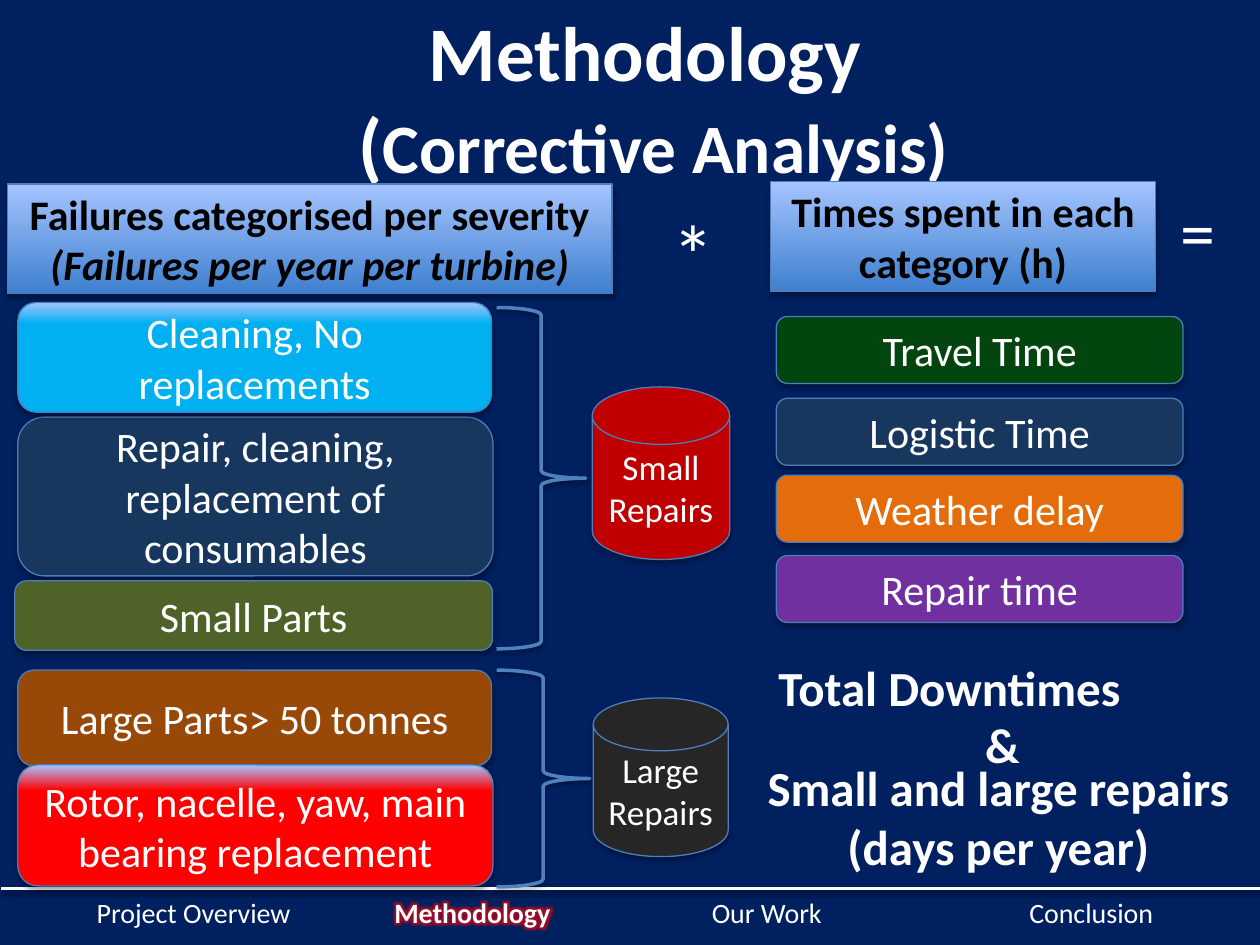
from dataclasses import dataclass

from lxml.etree import SubElement
from pptx import Presentation
from pptx.dml.color import RGBColor
from pptx.enum.shapes import MSO_CONNECTOR, MSO_SHAPE
from pptx.enum.text import MSO_ANCHOR, PP_ALIGN
from pptx.oxml.ns import qn
from pptx.util import Cm, Pt


@dataclass(frozen=True)
class Theme:
    font: str = "Calibri"
    background: str = "002060"
    light: str = "FFFFFF"
    dark: str = "000000"
    outline: str = "4B7EBC"
    brace: str = "4F81BD"
    header: str = "3F80CE"
    highlight: str = "A4C4FF"
    glow: str = "FF0000"
    cleaning: str = "00B0F0"
    navy: str = "17375E"
    small_parts: str = "4F6228"
    large_parts: str = "984807"
    rotor: str = "FF0000"
    small_repairs: str = "C00000"
    large_repairs: str = "262626"
    travel: str = "03450E"
    weather: str = "E46C0A"
    repair: str = "7030A0"
    title_size: float = 44.1
    subtitle_size: float = 39.6
    times_size: float = 48
    equals_size: float = 40
    result_size: float = 28
    body_size: float = 24
    disk_size: float = 20
    footer_size: float = 16


THEME = Theme()


def rgb(color):
    return RGBColor.from_string(color)


def add_effect(parent, tag, color, opacity, **attributes):
    effect = SubElement(parent, qn(tag), {key: str(value) for key, value in attributes.items()})
    color_element = SubElement(effect, qn("a:srgbClr"), val=color)
    SubElement(color_element, qn("a:alpha"), val=str(opacity * 1000))


def add_shadow(shape, opacity, distance):
    effects = SubElement(shape.element.spPr, qn("a:effectLst"))
    add_effect(effects, "a:outerShdw", THEME.dark, opacity, blurRad=Pt(3.1),
               dist=Pt(distance), dir=5400000, rotWithShape=0)


def add_run(paragraph, text, size, color=THEME.light, bold=False, italic=False):
    run = paragraph.add_run()
    run.text = text
    font = run.font
    font.name, font.size, font.bold, font.italic = THEME.font, Pt(size), bold, italic
    font.color.rgb = rgb(color)
    return run


def add_glow(run):
    latin = run.font._element.find(qn("a:latin"))
    effects = SubElement(run.font._element, qn("a:effectLst"))
    latin.addprevious(effects)
    add_effect(effects, "a:glow", THEME.glow, 60, rad=Pt(8))


def add_text(slide, box, lines, size, bold=False, align=PP_ALIGN.LEFT, wrap=True):
    """Add a text box with one paragraph per line and return its last run."""
    frame = slide.shapes.add_textbox(*map(Cm, box)).text_frame
    frame.word_wrap = wrap
    for index, line in enumerate(lines):
        paragraph = frame.add_paragraph() if index else frame.paragraphs[0]
        paragraph.alignment = align
        run = add_run(paragraph, line, size, bold=bold)
    return run


def add_title(slide):
    frame = slide.shapes.add_textbox(Cm(5.08), Cm(0), Cm(16.2), Cm(3.9)).text_frame
    frame.word_wrap = True
    frame.vertical_anchor = MSO_ANCHOR.MIDDLE
    paragraph = frame.paragraphs[0]
    paragraph.alignment = PP_ALIGN.CENTER
    add_run(paragraph, "Methodology ", THEME.title_size, bold=True)
    paragraph.add_line_break()
    add_run(paragraph, "(", THEME.title_size, bold=True)
    add_run(paragraph, "Corrective Analysis)", THEME.subtitle_size, bold=True)


def add_block(slide, kind, box, color, gradient_start=None):
    """Add an outlined shape; a gradient start fades the colour to the highlight at the top."""
    shape = slide.shapes.add_shape(kind, *map(Cm, box))
    if gradient_start is None:
        shape.fill.solid()
        shape.fill.fore_color.rgb = rgb(color)
    else:
        shape.fill.gradient()
        shape.fill.gradient_angle = 90
        stops = zip(shape.fill.gradient_stops, (gradient_start, 1), (color, THEME.highlight))
        for stop, position, stop_color in stops:
            stop.position = position
            stop.color.rgb = rgb(stop_color)
    shape.line.color.rgb = rgb(THEME.outline)
    shape.line.width = Pt(0.75)
    add_shadow(shape, 35, 1.8)
    shape.text_frame.word_wrap = True
    shape.text_frame.vertical_anchor = MSO_ANCHOR.MIDDLE
    shape.text_frame.paragraphs[0].alignment = PP_ALIGN.CENTER
    return shape.text_frame


def add_label(slide, kind, box, color, text, size=THEME.body_size, gradient_start=None):
    frame = add_block(slide, kind, box, color, gradient_start)
    add_run(frame.paragraphs[0], text, size)


def add_header(slide, box, heading, unit=None):
    frame = add_block(slide, MSO_SHAPE.FLOWCHART_PROCESS, box, THEME.header, 0)
    add_run(frame.paragraphs[0], heading, THEME.body_size, THEME.dark, bold=True)
    if unit:
        paragraph = frame.add_paragraph()
        paragraph.alignment = PP_ALIGN.CENTER
        add_run(paragraph, unit, THEME.body_size, THEME.dark, bold=True, italic=True)


def add_brace(slide, box):
    brace = slide.shapes.add_shape(MSO_SHAPE.RIGHT_BRACE, *map(Cm, box))
    brace.fill.background()
    brace.line.color.rgb = rgb(THEME.brace)
    brace.line.width = Pt(2)
    add_shadow(brace, 38, 1.6)


def add_footer(slide):
    sections = (("Project Overview", 1.7), ("Methodology", 7.7), ("Our Work", 14.1), ("Conclusion", 20.5))
    for name, left in sections:
        current = name == "Methodology"
        run = add_text(slide, (left, 17.92, 5.59, 0.94), [name], THEME.footer_size, bold=current)
        if current:
            add_glow(run)
    rule = slide.shapes.add_connector(MSO_CONNECTOR.STRAIGHT, Cm(0.03), Cm(17.91), Cm(25.43), Cm(17.91))
    rule.line.color.rgb = rgb(THEME.light)
    rule.line.width = Pt(2)
    add_shadow(rule, 38, 1.6)


def add_failures(slide):
    add_header(slide, (0.15, 3.71, 12.19, 2.21), "Failures categorised per severity",
               "(Failures per year per turbine)")
    categories = (
        ("Repair, cleaning, replacement of consumables", (0.36, 8.41, 9.58, 3.2), THEME.navy, None),
        ("Small Parts", (0.3, 11.71, 9.63, 1.4), THEME.small_parts, None),
        ("Large Parts> 50 tonnes", (0.36, 13.51, 9.55, 1.93), THEME.large_parts, None),
        ("Rotor, nacelle, yaw, main bearing replacement", (0.36, 15.42, 9.58, 2.44), THEME.rotor, 0.79),
        ("Cleaning, No replacements", (0.36, 6.1, 9.55, 2.21), THEME.cleaning, 0.81),
    )
    for text, box, color, start in categories:
        add_label(slide, MSO_SHAPE.FLOWCHART_ALTERNATE_PROCESS, box, color, text, gradient_start=start)
    groups = (
        ("Small Repairs", (10.01, 6.2, 1.8, 6.88), (11.94, 7.8, 2.77, 3.48), THEME.small_repairs),
        ("Large Repairs", (10.01, 13.51, 1.88, 4.37), (11.96, 14.07, 2.72, 3.2), THEME.large_repairs),
    )
    for text, brace_box, disk_box, color in groups:
        add_brace(slide, brace_box)
        add_label(slide, MSO_SHAPE.FLOWCHART_MAGNETIC_DISK, disk_box, color, text, THEME.disk_size)


def add_times(slide):
    add_header(slide, (15.54, 3.66, 7.75, 2.21), "Times spent in each category (h)")
    times = (("Travel Time", 6.38, THEME.travel), ("Logistic Time", 8.03, THEME.navy),
             ("Weather delay", 9.58, THEME.weather), ("Repair time", 11.2, THEME.repair))
    for text, top, color in times:
        add_label(slide, MSO_SHAPE.FLOWCHART_ALTERNATE_PROCESS, (15.65, top, 8.2, 1.35), color, text)


def add_result(slide):
    add_text(slide, (13.31, 3.94, 1.37, 2.31), ["*"], THEME.times_size, wrap=False)
    add_text(slide, (23.55, 3.68, 1.22, 1.96), ["="], THEME.equals_size, wrap=False)
    add_text(slide, (15.44, 13.13, 8.31, 1.45), ["Total Downtimes"], THEME.result_size, bold=True)
    add_text(slide, (19.61, 14.27, 1.17, 1.45), ["&"], THEME.result_size, bold=True)
    add_text(slide, (14.83, 15.14, 10.59, 2.64), ["Small and large repairs", "(days per year)"],
             THEME.result_size, bold=True, align=PP_ALIGN.CENTER)


def main():
    presentation = Presentation()
    presentation.slide_width, presentation.slide_height = Cm(25.4), Cm(19.05)
    slide = presentation.slides.add_slide(presentation.slide_layouts[6])
    slide.background.fill.solid()
    slide.background.fill.fore_color.rgb = rgb(THEME.background)
    add_footer(slide)
    add_title(slide)
    add_failures(slide)
    add_times(slide)
    add_result(slide)
    presentation.save("out.pptx")


if __name__ == "__main__":
    main()
